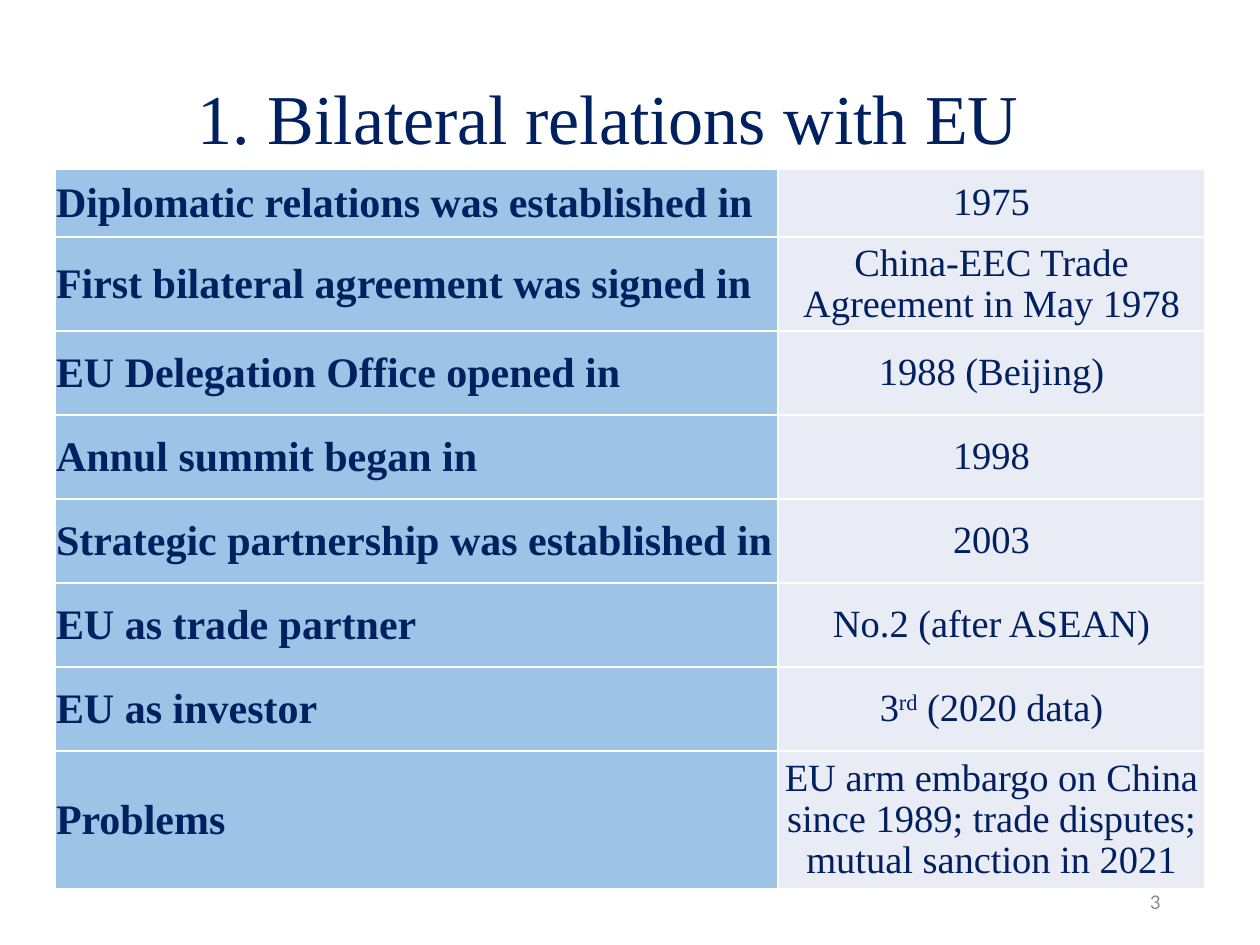
from pptx import Presentation
from pptx.dml.color import RGBColor as RGB
from pptx.enum.text import MSO_ANCHOR as ANCHOR, PP_ALIGN as ALIGN
from pptx.oxml import parse_xml
from pptx.oxml.ns import nsdecls
from pptx.util import Pt

COLORS = {"navy": "002060", "gray": "8C8C8C", "label": "9DC3E6",
          "value": "E9EBF5", "border": "FFFFFF"}
SERIF = "Times New Roman"
FACTS = [
    ("Diplomatic relations was established in", ["1975"], 68),
    ("First bilateral agreement was signed in",
     ["China-EEC Trade Agreement in May 1978"], 94),
    ("EU Delegation Office opened in", ["1988 (Beijing)"], 84),
    ("Annul summit began in", ["1998"], 84),
    ("Strategic partnership was established in", ["2003"], 84),
    ("EU as trade partner", ["No.2 (after ASEAN)"], 84),
    ("EU as investor", ["3", "rd", " (2020 data)"], 84),
    ("Problems", ["EU arm embargo on China since 1989; trade disputes; "
                  "mutual sanction in 2021"], 138),
]


def px(n):
    return round(n * 914400 / 126)


def write(tf, *texts, size, color="navy", font=SERIF, bold=False,
          align=ALIGN.LEFT, spacing=None):
    tf.word_wrap = True
    p = tf.paragraphs[0]
    p.alignment = align
    p.line_spacing = spacing
    for text in texts:
        r = p.add_run()
        r.text = text
        r.font.size = Pt(size)
        r.font.name = font
        r.font.bold = bold
        r.font.color.rgb = RGB.from_string(COLORS[color])
    return p


def add_text(s, box, text, anchor=ANCHOR.TOP, **fmt):
    tf = s.shapes.add_textbox(*map(px, box)).text_frame
    tf.vertical_anchor = anchor
    write(tf, text, **fmt)


def style_cell(cell, fill):
    cell.margin_left = cell.margin_right = cell.margin_top = px(1)
    cell.margin_bottom = 0
    cell.vertical_anchor = ANCHOR.MIDDLE
    tc_pr = cell._tc.get_or_add_tcPr()
    for side in ("lnL", "lnR", "lnT", "lnB"):
        tc_pr.append(parse_xml(
            f'<a:{side} {nsdecls("a")} w="{Pt(1)}"><a:solidFill>'
            f'<a:srgbClr val="{COLORS["border"]}"/></a:solidFill></a:{side}>'))
    cell.fill.solid()
    cell.fill.fore_color.rgb = RGB.from_string(COLORS[fill])


def add_facts(s, box):
    x, y, w, h = box
    table = s.shapes.add_table(len(FACTS), 2, *map(px, box)).table
    table.first_row = table.horz_banding = False
    label_w = 723
    table.columns[0].width = px(label_w)
    table.columns[1].width = px(w - label_w)
    for i, (label, value, height) in enumerate(FACTS):
        table.rows[i].height = px(height)
        left, right = table.cell(i, 0), table.cell(i, 1)
        style_cell(left, "label")
        style_cell(right, "value")
        write(left.text_frame, label, size=24, bold=True)
        p = write(right.text_frame, *value, size=22, align=ALIGN.CENTER,
                  spacing=0.96)
        for r in p.runs:
            if r.text == "rd":
                r.font._element.set("baseline", "30000")


def build_slide(prs):
    s = prs.slides.add_slide(prs.slide_layouts[6])
    add_text(s, (132, 68, 953, 97), "1. Bilateral relations with EU",
             size=40, align=ALIGN.CENTER)
    add_text(s, (890, 876, 283, 50), "3", anchor=ANCHOR.MIDDLE, size=12,
             color="gray", font="Calibri", align=ALIGN.RIGHT)
    add_facts(s, (55, 169, 1150, sum(row[2] for row in FACTS)))


def main():
    prs = Presentation()
    prs.slide_width, prs.slide_height = px(1260), px(945)
    build_slide(prs)
    prs.save("out.pptx")


if __name__ == "__main__":
    main()
